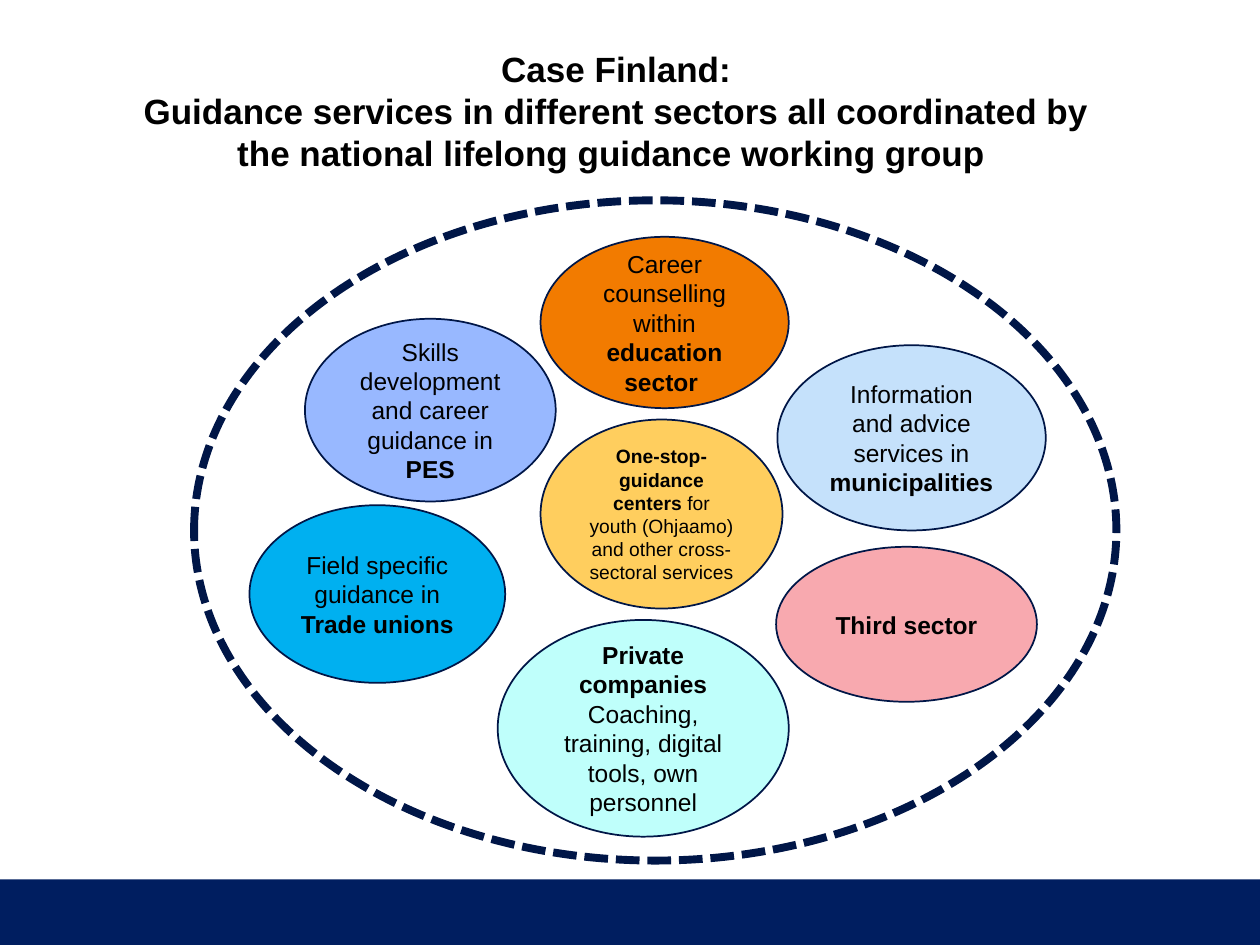
from dataclasses import dataclass

import pptx
import pptx.dml.color
import pptx.enum.dml
import pptx.enum.shapes
import pptx.enum.text
import pptx.util

Inches = pptx.util.Inches
Pt = pptx.util.Pt
Kind = pptx.enum.shapes.MSO_SHAPE
Align = pptx.enum.text.PP_ALIGN
Anchor = pptx.enum.text.MSO_ANCHOR

NAVY = "001647"
BLACK = "000000"


@dataclass(frozen=True)
class Part:
    text: str
    bold: bool = False


@dataclass(frozen=True)
class Sector:
    left: float
    top: float
    width: float
    height: float
    fill: str
    lines: tuple[tuple[Part, ...], ...]
    size: int = 14


SECTORS = (
    Sector(2.42, 2.53, 1.99, 1.45, "98B8FF",
           ((Part("Skills development and career guidance in "), Part("PES", True)),)),
    Sector(4.29, 1.88, 1.97, 1.36, "F27B00",
           ((Part("Career counselling within "), Part("education sector ", True)),)),
    Sector(3.95, 4.92, 2.31, 1.72, "BFFFFB",
           ((Part("Private companies", True),),
            (Part("Coaching, training, digital tools, own personnel"),))),
    Sector(1.98, 4.01, 2.03, 1.41, "00B0F0",
           ((Part("Field specific guidance in "), Part("Trade unions", True)),)),
    Sector(6.17, 2.74, 2.13, 1.47, "C5E1FB",
           ((Part("Information and advice services in "), Part("municipalities", True)),)),
    Sector(4.29, 3.33, 1.92, 1.5, "FFCE5E",
           ((Part("One-stop-guidance centers ", True),
             Part("for youth (Ohjaamo) and other cross-sectoral services")),), 11),
    Sector(6.16, 4.34, 2.07, 1.23, "F8A9AF", ((Part("Third sector", True),),)),
)

TITLE = (
    (Part("Case Finland:", True),),
    (Part("Guidance services in different sectors all coordinated by "
          "the national lifelong guidance working group ", True),),
)


def paint(color, value: str) -> None:
    color.rgb = pptx.dml.color.RGBColor.from_string(value)


def write(frame, lines: tuple[tuple[Part, ...], ...], size: int) -> None:
    frame.word_wrap = True
    frame.text = "\n".join("" for _ in lines)
    for para, parts in zip(frame.paragraphs, lines):
        para.alignment = Align.CENTER
        for part in parts:
            run = para.add_run()
            run.text = part.text
            run.font.name = "Arial"
            run.font.size = Pt(size)
            run.font.bold = part.bold
            paint(run.font.color, BLACK)


def add_shape(slide, kind, left: float, top: float, width: float, height: float, fill: str = ""):
    shape = slide.shapes.add_shape(
        kind, Inches(left), Inches(top), Inches(width), Inches(height))
    shape.shadow.inherit = False
    if fill:
        shape.fill.solid()
        paint(shape.fill.fore_color, fill)
    else:
        shape.fill.background()
    return shape


def add_sector(slide, item: Sector) -> None:
    oval = add_shape(slide, Kind.OVAL, item.left, item.top, item.width, item.height, item.fill)
    paint(oval.line.color, NAVY)
    oval.line.width = Pt(1)
    oval.text_frame.vertical_anchor = Anchor.MIDDLE
    write(oval.text_frame, item.lines, item.size)


def add_ring(slide) -> None:
    ring = add_shape(slide, Kind.OVAL, 1.54, 1.59, 7.32, 5.24)
    paint(ring.line.color, NAVY)
    ring.line.width = Pt(4.5)
    ring.line.dash_style = pptx.enum.dml.MSO_LINE.SQUARE_DOT


def set_title(slide) -> None:
    title = slide.shapes.title
    title.left, title.top = Inches(0.99), Inches(0.33)
    title.width, title.height = Inches(7.8), Inches(1.11)
    title.text_frame.vertical_anchor = Anchor.TOP
    title.text_frame.auto_size = pptx.enum.text.MSO_AUTO_SIZE.NONE
    write(title.text_frame, TITLE, 20)


def main() -> None:
    deck = pptx.Presentation()
    deck.slide_width, deck.slide_height = Inches(10), Inches(7.5)
    slide = deck.slides.add_slide(deck.slide_layouts[5])
    set_title(slide)
    band = add_shape(slide, Kind.RECTANGLE, 0, 6.98, 10, 0.52, "001E60")
    band.line.fill.background()
    for item in SECTORS:
        add_sector(slide, item)
    add_ring(slide)
    deck.save("out.pptx")


if __name__ == "__main__":
    main()
